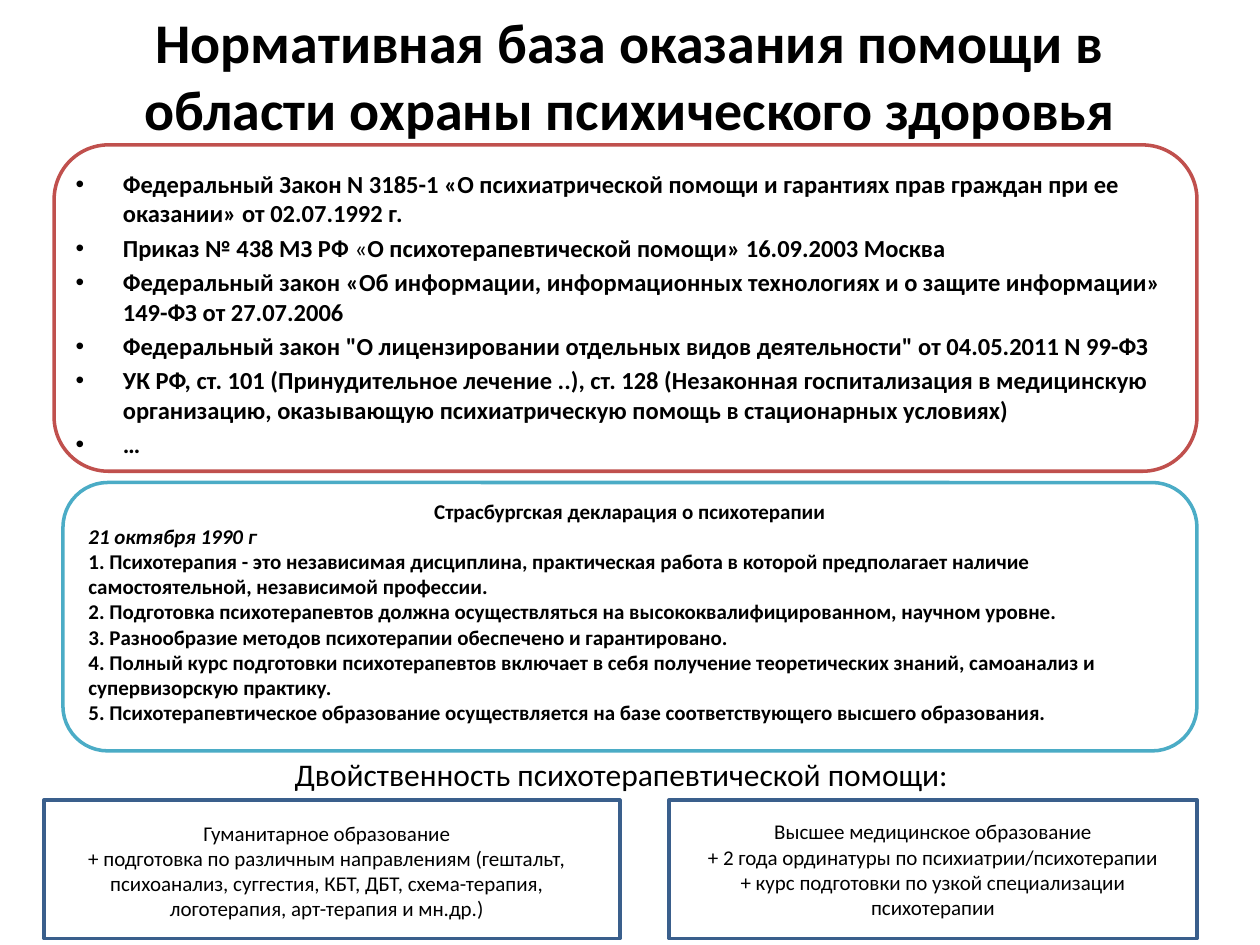
"""Builds the slide on the legal basis of mental health care."""
import pptx
import pptx.util
import pptx.dml.color
import pptx.enum.shapes
import pptx.enum.text

Inches = pptx.util.Inches
Pt = pptx.util.Pt
SHAPE = pptx.enum.shapes.MSO_SHAPE
ALIGN = pptx.enum.text.PP_ALIGN
MIDDLE = pptx.enum.text.MSO_ANCHOR.MIDDLE
TOP = pptx.enum.text.MSO_ANCHOR.TOP

COLORS = {"paper": "FFFFFF", "ink": "000000", "laws": "C0504D",
          "declaration": "4BACC6", "training": "3A5F8C"}

TITLE = "Нормативная база оказания помощи в области охраны психического здоровья"
LAWS = [
    "Федеральный Закон N 3185-1 «О психиатрической помощи и гарантиях прав граждан при ее оказании» от 02.07.1992 г.",
    [("Приказ № 438 МЗ РФ", {}), (" «", {"bold": False}),
     ("О психотерапевтической помощи» 16.09.2003 Москва", {})],
    "Федеральный закон «Об информации, информационных технологиях и о защите информации» 149-ФЗ от 27.07.2006",
    "Федеральный закон \"О лицензировании отдельных видов деятельности\" от 04.05.2011 N 99-ФЗ",
    "УК РФ, ст. 101 (Принудительное лечение ..), ст. 128 (Незаконная госпитализация в медицинскую организацию, "
    "оказывающую психиатрическую помощь в стационарных условиях)",
    "…",
]
DECLARATION_TITLE = "Страсбургская декларация о психотерапии"
DECLARATION = [
    DECLARATION_TITLE,
    [("21 октября 1990 г", {"italic": True})],
    "1. Психотерапия - это независимая дисциплина, практическая работа в которой предполагает наличие "
    "самостоятельной, независимой профессии.",
    "2. Подготовка психотерапевтов должна осуществляться на высококвалифицированном, научном уровне.",
    "3. Разнообразие методов психотерапии обеспечено и гарантировано.",
    "4. Полный курс подготовки психотерапевтов включает в себя получение теоретических знаний, самоанализ и "
    "супервизорскую практику.",
    "5. Психотерапевтическое образование осуществляется на базе соответствующего высшего образования.",
]
DUALITY = ["Двойственность психотерапевтической помощи:"]
HUMANITIES = [
    "Гуманитарное образование",
    "+ подготовка по различным направлениям (гештальт, психоанализ, суггестия, КБТ, ДБТ, схема-терапия, "
    "логотерапия, арт-терапия и мн.др.)",
]
MEDICAL = [
    "Высшее медицинское образование",
    "+ 2 года ординатуры по психиатрии/психотерапии",
    "+ курс подготовки по узкой специализации психотерапии",
]


def rgb(name):
    return pptx.dml.color.RGBColor.from_string(COLORS[name])


def apply(target, values):
    for name, value in values.items():
        setattr(target, name, value)


def write(box, paragraphs, size, bold=False, align=None, anchor=MIDDLE):
    frame = box.text_frame
    apply(frame, {"word_wrap": True, "vertical_anchor": anchor,
                  "auto_size": pptx.enum.text.MSO_AUTO_SIZE.NONE})
    for index, content in enumerate(paragraphs):
        para = frame.add_paragraph() if index else frame.paragraphs[0]
        if align is not None:
            para.alignment = align
        for text, changes in [(content, {})] if isinstance(content, str) else content:
            span = para.add_run()
            span.text = text
            apply(span.font, {"name": "Calibri", "size": Pt(size), "bold": bold, **changes})
            span.font.color.rgb = rgb("ink")


def add_panel(page, kind, place, color):
    panel = page.shapes.add_shape(kind, *map(Inches, place))
    panel.shadow.inherit = False
    panel.fill.solid()
    panel.fill.fore_color.rgb = rgb("paper")
    panel.line.color.rgb = rgb(color)
    panel.line.width = Pt(2)
    return panel


def place_holder(page, holder, place):
    apply(holder, dict(zip(("left", "top", "width", "height"), map(Inches, place))))
    page.shapes.element.append(holder.element)
    return holder


def main():
    deck = pptx.Presentation()
    apply(deck, {"slide_width": Inches(10), "slide_height": Inches(7.5)})
    page = deck.slides.add_slide(deck.slide_layouts[1])
    title, body = page.placeholders

    add_panel(page, SHAPE.RECTANGLE, (0.35, 6.35, 4.57, 1.1), "training")
    add_panel(page, SHAPE.ROUNDED_RECTANGLE, (0.43, 1.15, 9.07, 2.59), "laws")
    write(place_holder(page, title, (0.5, -0.03, 9, 1.25)), [TITLE], 32, True, ALIGN.CENTER)
    write(place_holder(page, body, (0.5, 1.15, 9, 2.68)), LAWS, 14, True)

    declaration = add_panel(page, SHAPE.ROUNDED_RECTANGLE, (0.5, 3.83, 9, 2.13), "declaration")
    write(declaration, DECLARATION, 12, True, ALIGN.LEFT)
    declaration.text_frame.margin_bottom = Inches(0.13)
    declaration.text_frame.paragraphs[0].alignment = ALIGN.CENTER

    humanities = page.shapes.add_textbox(*map(Inches, (0.51, 6.46, 4.17, 0.91)))
    write(humanities, HUMANITIES, 12, align=ALIGN.CENTER, anchor=TOP)
    medical = add_panel(page, SHAPE.RECTANGLE, (5.31, 6.35, 4.19, 1.1), "training")
    write(medical, MEDICAL, 12, align=ALIGN.CENTER)
    duality = page.shapes.add_textbox(*map(Inches, (2.24, 5.94, 7.41, 0.4)))
    write(duality, DUALITY, 18, anchor=TOP)
    deck.save("out.pptx")


if __name__ == "__main__":
    main()
